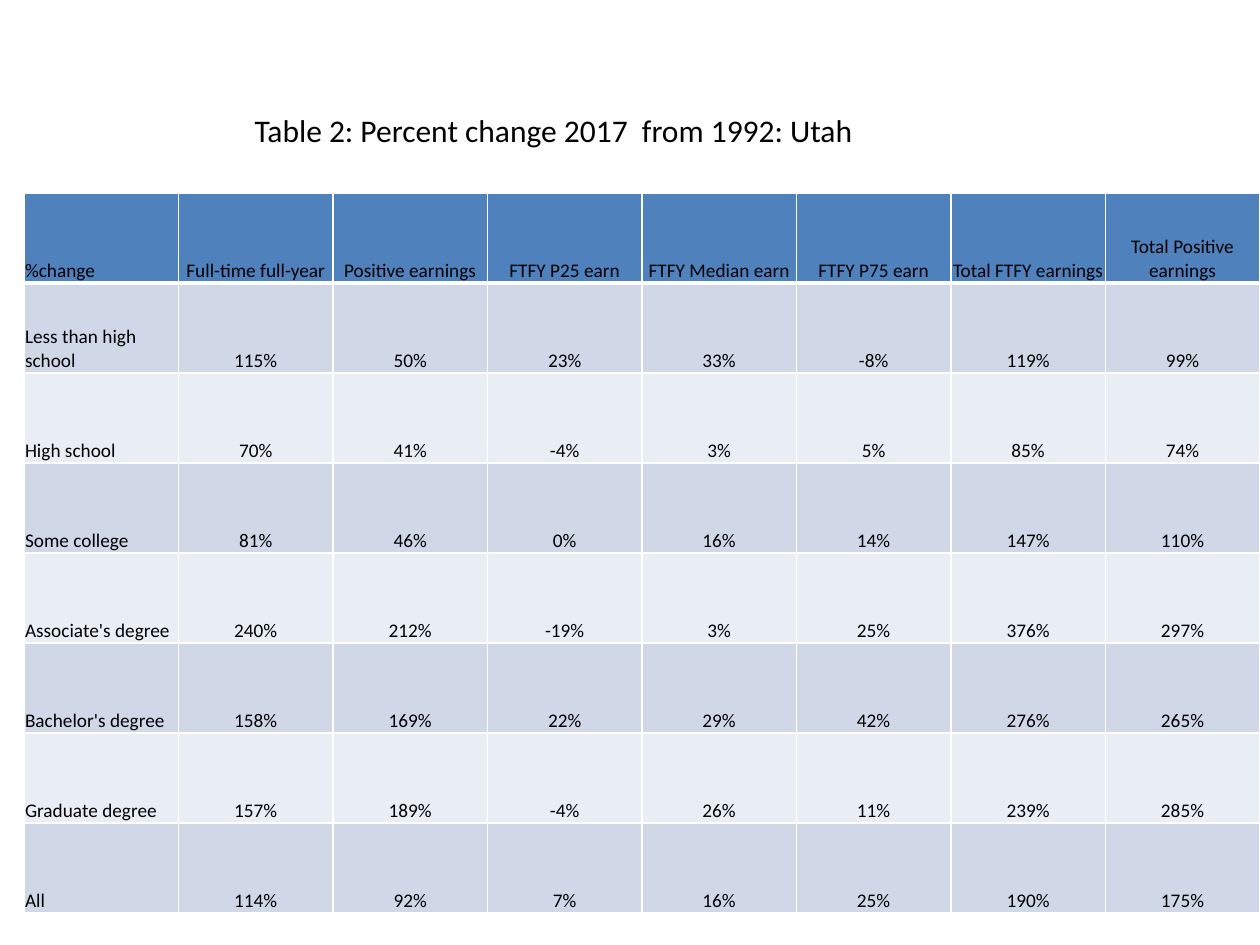
from typing import NamedTuple

from lxml.etree import SubElement
from pptx import Presentation
from pptx.dml.color import RGBColor
from pptx.enum.text import MSO_ANCHOR, MSO_AUTO_SIZE, PP_ALIGN
from pptx.oxml.ns import qn
from pptx.util import Emu, Pt

PX_PER_INCH = 126
FONT = "Calibri"
COLORS = {
    "text": "000000",
    "border": "FFFFFF",
    "header": "4F81BD",
    "band_dark": "D0D8E8",
    "band_light": "E9EDF4",
}


class Box(NamedTuple):
    left: int
    top: int
    width: int
    height: int


class EducationRow(NamedTuple):
    level: str
    changes: tuple[int, ...]


TITLE = "Table 2: Percent change 2017  from 1992: Utah"
TITLE_BOX = Box(242, 105, 635, 89)
TABLE_BOX = Box(24, 193, 1236, 720)
HEADERS = (
    "%change", "Full-time full-year", "Positive earnings", "FTFY P25 earn",
    "FTFY Median earn", "FTFY P75 earn", "Total FTFY earnings",
    "Total Positive earnings",
)
ROWS = (
    EducationRow("Less than high school", (115, 50, 23, 33, -8, 119, 99)),
    EducationRow("High school", (70, 41, -4, 3, 5, 85, 74)),
    EducationRow("Some college", (81, 46, 0, 16, 14, 147, 110)),
    EducationRow("Associate's degree", (240, 212, -19, 3, 25, 376, 297)),
    EducationRow("Bachelor's degree", (158, 169, 22, 29, 42, 276, 265)),
    EducationRow("Graduate degree", (157, 189, -4, 26, 11, 239, 285)),
    EducationRow("All", (114, 92, 7, 16, 25, 190, 175)),
)


def px(n: int) -> Emu:
    return Emu(round(n * 914400 / PX_PER_INCH))


def color(name: str) -> RGBColor:
    return RGBColor.from_string(COLORS[name])


def add_text(tf, text: str, size: int, align: PP_ALIGN) -> None:
    p = tf.paragraphs[0]
    p.alignment = align
    r = p.add_run()
    r.text = text
    r.font.name = FONT
    r.font.size = Pt(size)
    r.font.bold = False
    r.font.color.rgb = color("text")


def set_borders(cell, top: int, bottom: int) -> None:
    tc_pr = cell._tc.get_or_add_tcPr()
    for side, width in (("L", 1), ("R", 1), ("T", top), ("B", bottom)):
        ln = SubElement(tc_pr, qn(f"a:ln{side}"), w=str(Pt(width)))
        fill = SubElement(ln, qn("a:solidFill"))
        SubElement(fill, qn("a:srgbClr"), val=COLORS["border"])


def add_title(s) -> None:
    sp = s.shapes.title
    sp.left, sp.top, sp.width, sp.height = map(px, TITLE_BOX)
    tf = sp.text_frame
    tf.word_wrap = False
    tf.auto_size = MSO_AUTO_SIZE.NONE
    tf.vertical_anchor = MSO_ANCHOR.TOP
    add_text(tf, TITLE, 18, PP_ALIGN.LEFT)


def fill_cell(cell, text: str, row: int, col: int) -> None:
    # A heavier rule separates the header from the body
    set_borders(cell, top=3 if row == 1 else 1, bottom=3 if row == 0 else 1)
    band = "header" if row == 0 else "band_dark" if row % 2 else "band_light"
    cell.fill.solid()
    cell.fill.fore_color.rgb = color(band)
    cell.margin_left = cell.margin_right = cell.margin_top = px(1)
    cell.margin_bottom = 0
    cell.vertical_anchor = MSO_ANCHOR.BOTTOM
    align = PP_ALIGN.CENTER if col else PP_ALIGN.LEFT
    add_text(cell.text_frame, text, 11, align)


def add_earnings_table(s) -> None:
    grid = [HEADERS]
    grid += [(row.level, *(f"{n}%" for n in row.changes)) for row in ROWS]
    frame = s.shapes.add_table(len(grid), len(HEADERS), *map(px, TABLE_BOX))
    table = frame.table
    table.first_row = table.horz_banding = False
    for i, texts in enumerate(grid):
        for j, text in enumerate(texts):
            fill_cell(table.cell(i, j), text, i, j)


def main() -> None:
    prs = Presentation()
    prs.slide_width, prs.slide_height = px(1260), px(945)
    s = prs.slides.add_slide(prs.slide_layouts[5])
    # Title above the table
    add_title(s)
    # Earnings change by education level
    add_earnings_table(s)
    prs.save("out.pptx")


if __name__ == "__main__":
    main()
